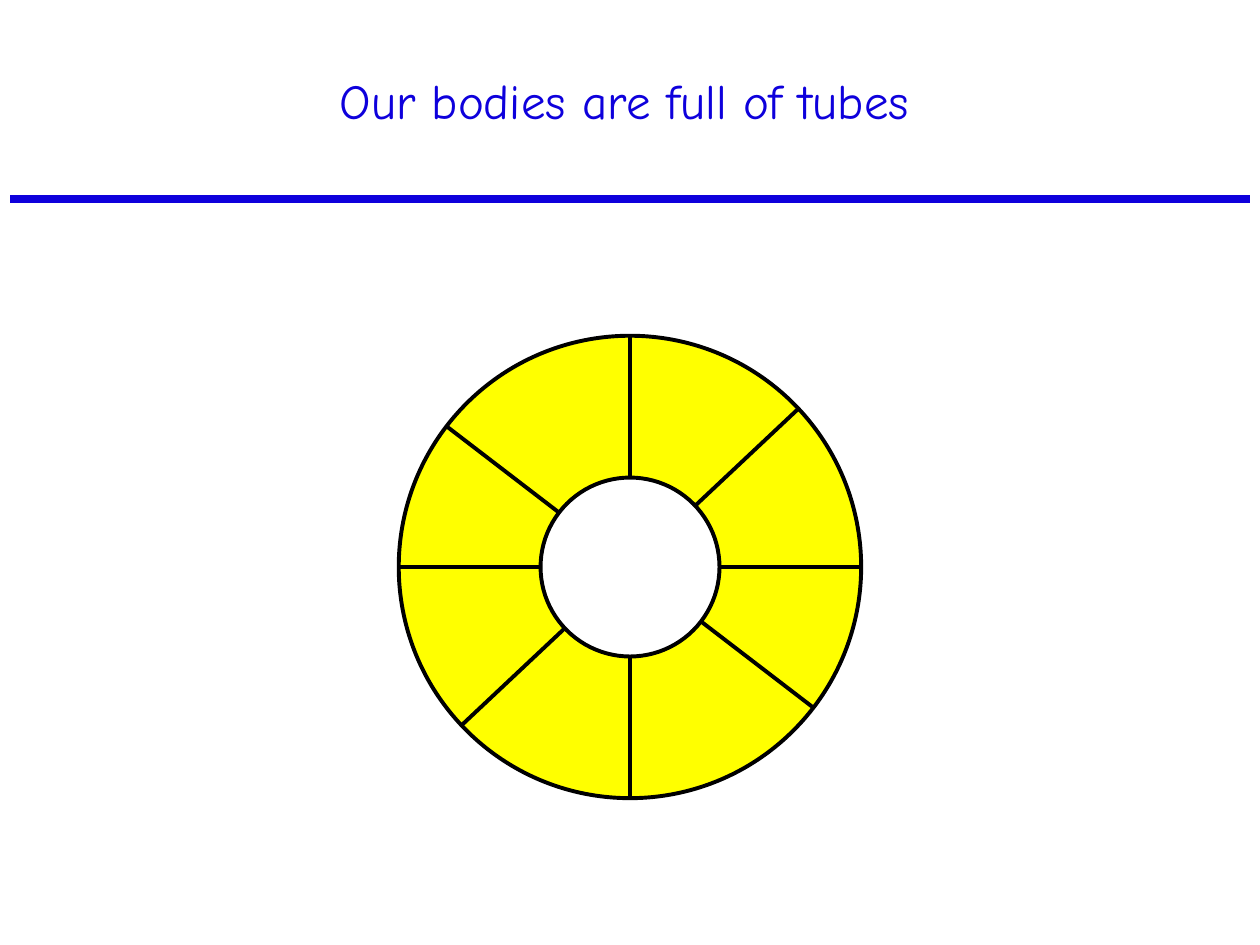
from lxml import etree
from pptx import Presentation
from pptx.dml.color import RGBColor
from pptx.enum.shapes import MSO_CONNECTOR, MSO_SHAPE
from pptx.enum.text import MSO_ANCHOR, PP_ALIGN
from pptx.oxml.ns import qn
from pptx.util import Inches, Pt

STRAIGHT = MSO_CONNECTOR.STRAIGHT
OVAL = MSO_SHAPE.OVAL
MIDDLE = MSO_ANCHOR.MIDDLE
CENTER = PP_ALIGN.CENTER

BLUE = RGBColor(0x0E, 0x00, 0xDC)
YELLOW = RGBColor(0xFF, 0xFF, 0x00)
WHITE = RGBColor(0xFF, 0xFF, 0xFF)
BLACK = RGBColor(0x00, 0x00, 0x00)

SLIDE_WIDTH, SLIDE_HEIGHT = 10, 7.5
CENTER_X, CENTER_Y = SLIDE_WIDTH * 0.5, SLIDE_HEIGHT * 0.6
OUTER_DIAMETER, INNER_DIAMETER = 3.67, 1.42
OUTER_RADIUS = OUTER_DIAMETER / 2
RULE_MARGIN, RULE_Y = 0.08, 1.58
OUTLINE_WIDTH = 2.25
CELL_WALLS = [(-1.46, -1.12), (0, -OUTER_RADIUS), (1.33, -1.25), (-OUTER_RADIUS, 0)]


def add_title(slide, text):
    """Add the centred slide title."""
    box = slide.shapes.add_textbox(Inches(0.33), Inches(0.17), Inches(9.25), Inches(1.25))
    frame = box.text_frame
    frame.word_wrap = True
    frame.vertical_anchor = MIDDLE
    paragraph = frame.paragraphs[0]
    paragraph.text = text
    paragraph.alignment = CENTER
    paragraph.font.name = "Comic Neue"
    paragraph.font.size = Pt(28)
    paragraph.font.color.rgb = BLUE


def add_line(slide, start, end, color, width):
    """Add a straight line between two points given in inches."""
    line = slide.shapes.add_connector(STRAIGHT, *map(Inches, (*start, *end)))
    line.line.color.rgb = color
    line.line.width = Pt(width)
    etree.SubElement(line._element.spPr, qn("a:effectLst"))


def add_circle(slide, diameter, fill_color):
    """Add an outlined circle around the centre of the tube."""
    left, top = CENTER_X - diameter / 2, CENTER_Y - diameter / 2
    circle = slide.shapes.add_shape(OVAL, *map(Inches, (left, top, diameter, diameter)))
    circle.shadow.inherit = False
    circle.fill.solid()
    circle.fill.fore_color.rgb = fill_color
    circle.line.color.rgb = BLACK
    circle.line.width = Pt(OUTLINE_WIDTH)


def add_tube(slide):
    """Add a tube cross-section: outer wall, dividing cell walls and lumen."""
    add_circle(slide, OUTER_DIAMETER, YELLOW)
    for x, y in CELL_WALLS:
        start, end = (CENTER_X + x, CENTER_Y + y), (CENTER_X - x, CENTER_Y - y)
        add_line(slide, start, end, BLACK, OUTLINE_WIDTH)
    add_circle(slide, INNER_DIAMETER, WHITE)


def main():
    """Build and save the slide."""
    presentation = Presentation()
    presentation.slide_width = Inches(SLIDE_WIDTH)
    presentation.slide_height = Inches(SLIDE_HEIGHT)
    slide = presentation.slides.add_slide(presentation.slide_layouts[6])
    add_title(slide, "Our bodies are full of tubes")
    add_line(slide, (RULE_MARGIN, RULE_Y), (SLIDE_WIDTH - RULE_MARGIN, RULE_Y), BLUE, 4.5)
    add_tube(slide)
    presentation.save("out.pptx")


if __name__ == "__main__":
    main()
